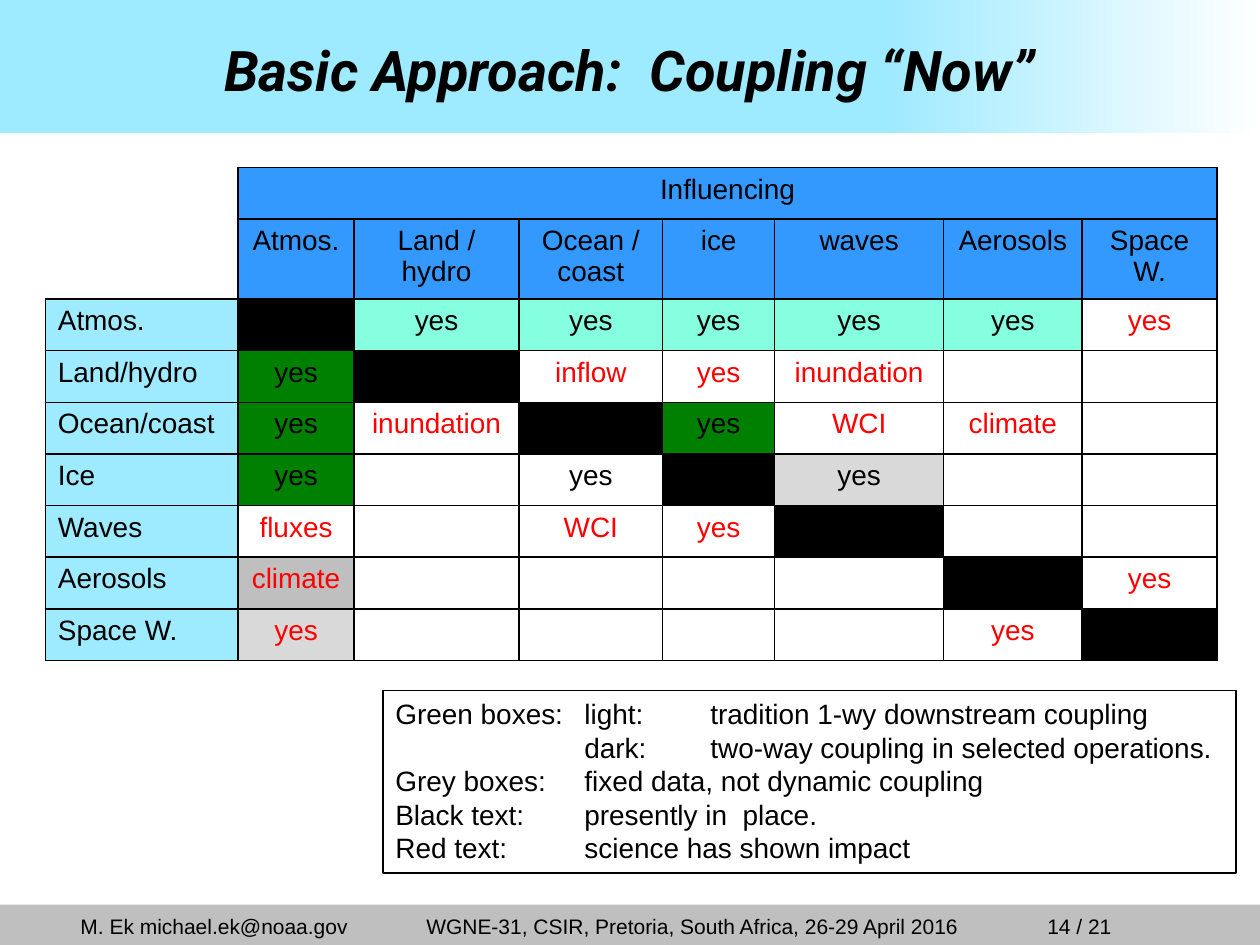
"""Build the slide on the present state of coupling between Earth system components."""
import pptx
import pptx.dml.color
import pptx.enum.shapes
import pptx.enum.text
import pptx.oxml
import pptx.oxml.ns
import pptx.util

Inches = pptx.util.Inches
Align = pptx.enum.text.PP_ALIGN
Anchor = pptx.enum.text.MSO_ANCHOR
RECTANGLE = pptx.enum.shapes.MSO_SHAPE.RECTANGLE
NAMESPACE = pptx.oxml.ns.nsdecls("a")
COLORS = {
    "black": "000000", "white": "FFFFFF", "red": "FF0000", "sky": "9EEAFF",
    "blue": "3399FF", "mint": "85FFE0", "green": "008000",
    "light grey": "D9D9D9", "grey": "BFBFBF",
}


def rgb(name):
    return pptx.dml.color.RGBColor.from_string(COLORS[name])


def style(paragraph, size, color="black", alignment=Align.LEFT, name="Arial"):
    paragraph.alignment = alignment
    paragraph.font.size = pptx.util.Pt(size)
    paragraph.font.name = name
    paragraph.font.color.rgb = rgb(color)


presentation = pptx.Presentation()
presentation.slide_width, presentation.slide_height = Inches(10), Inches(7.5)
slide = presentation.slides.add_slide(presentation.slide_layouts[5])

title = slide.shapes.title
title.left, title.top, title.width, title.height = Inches(0.25), Inches(0.23), Inches(9.5), Inches(0.64)
title.text_frame.text = "Basic Approach:  Coupling “Now”"
title.text_frame.vertical_anchor = Anchor.MIDDLE
paragraph = title.text_frame.paragraphs[0]
style(paragraph, 32, alignment=Align.CENTER, name="Roboto")
paragraph.font.bold = paragraph.font.italic = True

header_band = slide.shapes.add_shape(RECTANGLE, 0, 0, Inches(10), Inches(1.06))
header_band.fill.gradient()
header_band.fill.gradient_angle = 0
for stop, position, color in zip(header_band.fill.gradient_stops, (0.7, 1), ("sky", "white")):
    stop.position = position
    stop.color.rgb = rgb(color)
footer_band = slide.shapes.add_shape(RECTANGLE, 0, Inches(7.18), Inches(10), Inches(0.32))
footer_band.fill.solid()
footer_band.fill.fore_color.rgb = rgb("grey")
for band in (header_band, footer_band):
    band.shadow.inherit = False
    band.line.fill.background()
    title.element.addprevious(band.element)

footers = [
    (0.54, 2.45, Align.LEFT, "M. Ek michael.ek@noaa.gov"),
    (3.25, 4.49, Align.CENTER, "WGNE-31, CSIR, Pretoria, South Africa, 26-29 April 2016"),
    (8.01, 0.91, Align.RIGHT, "14 / 21"),
]
for left, width, alignment, text in footers:
    footer = slide.shapes.add_textbox(Inches(left), Inches(7.2), Inches(width), Inches(0.3))
    footer.text_frame.word_wrap = True
    footer.text_frame.vertical_anchor = Anchor.BOTTOM
    footer.text_frame.text = text
    style(footer.text_frame.paragraphs[0], 12, alignment=alignment)

rows = [
    ["", "Influencing", "", "", "", "", "", ""],
    ["", "Atmos.", "Land / hydro", "Ocean / coast", "ice", "waves", "Aerosols", "Space W."],
    ["Atmos.", "", "yes", "yes", "yes", "yes", "yes", "yes"],
    ["Land/hydro", "yes", "", "inflow", "yes", "inundation", "", ""],
    ["Ocean/coast", "yes", "inundation", "", "yes", "WCI", "climate", ""],
    ["Ice", "yes", "", "yes", "", "yes", "", ""],
    ["Waves", "fluxes", "", "WCI", "yes", "", "", ""],
    ["Aerosols", "climate", "", "", "", "", "", "yes"],
    ["Space W.", "yes", "", "", "", "", "yes", ""],
]
special_fills = {
    "mint": [(2, column) for column in range(2, 7)],
    "green": [(3, 1), (4, 1), (5, 1), (4, 4)],
    "light grey": [(5, 5), (8, 1)],
    "grey": [(7, 1)],
}
fills = {place: color for color, places in special_fills.items() for place in places}
black_text = special_fills["mint"] + special_fills["green"] + [(5, 3), (5, 5)]

table = slide.shapes.add_table(9, 8, Inches(0.36), Inches(1.33), Inches(9.3), Inches(3.88)).table
table.first_row = table.horz_banding = False
for column, width in zip(table.columns, (1.53, 0.92, 1.31, 1.14, 0.89, 1.34, 1.1, 1.07)):
    column.width = Inches(width)
for i, texts in enumerate(rows):
    table.rows[i].height = Inches(0.63 if i == 1 else 0.41)
    for j, text in enumerate(texts):
        cell = table.cell(i, j)
        corner = i < 2 and j == 0
        properties = cell._tc.get_or_add_tcPr()
        for side in "LRTB":
            line = "<a:noFill/>"
            if not corner or side in "RB":
                line = f'<a:solidFill><a:srgbClr val="{COLORS["black"]}"/></a:solidFill>'
            properties.append(pptx.oxml.parse_xml(f'<a:ln{side} {NAMESPACE} w="12700">{line}</a:ln{side}>'))
        if corner:
            fill = "white"
        elif i < 2:
            fill = "blue"
        elif j == 0:
            fill = "sky"
        elif j == i - 1:
            fill = "black"
        else:
            fill = fills.get((i, j), "white")
        cell.fill.solid()
        cell.fill.fore_color.rgb = rgb(fill)
        cell.text = text
        is_label = i < 2 or j == 0
        style(cell.text_frame.paragraphs[0], 16,
              "black" if is_label or (i, j) in black_text else "red",
              Align.LEFT if j == 0 else Align.CENTER)
table.cell(0, 0).merge(table.cell(1, 0))
table.cell(0, 1).merge(table.cell(0, 7))

legend = slide.shapes.add_shape(RECTANGLE, Inches(3.04), Inches(5.48), Inches(6.77), Inches(1.45))
legend.shadow.inherit = False
legend.fill.background()
legend.line.color.rgb = rgb("black")
legend.line.width = pptx.util.Pt(0.75)
legend.text_frame.word_wrap = True
legend.text_frame.vertical_anchor = Anchor.TOP
legend.text_frame.text = "\n".join([
    "Green boxes:\tlight:\ttradition 1-wy downstream coupling",
    "\tdark:\ttwo-way coupling in selected operations.",
    "Grey boxes:\tfixed data, not dynamic coupling",
    "Black text:\tpresently in  place.",
    "Red text:\tscience has shown impact",
])
for paragraph in legend.text_frame.paragraphs:
    tabs = "".join(f'<a:tab pos="{Inches(stop)}" algn="l"/>' for stop in (1.5, 2.5))
    paragraph._p.get_or_add_pPr().append(pptx.oxml.parse_xml(f"<a:tabLst {NAMESPACE}>{tabs}</a:tabLst>"))
    style(paragraph, 16)

presentation.save("out.pptx")
